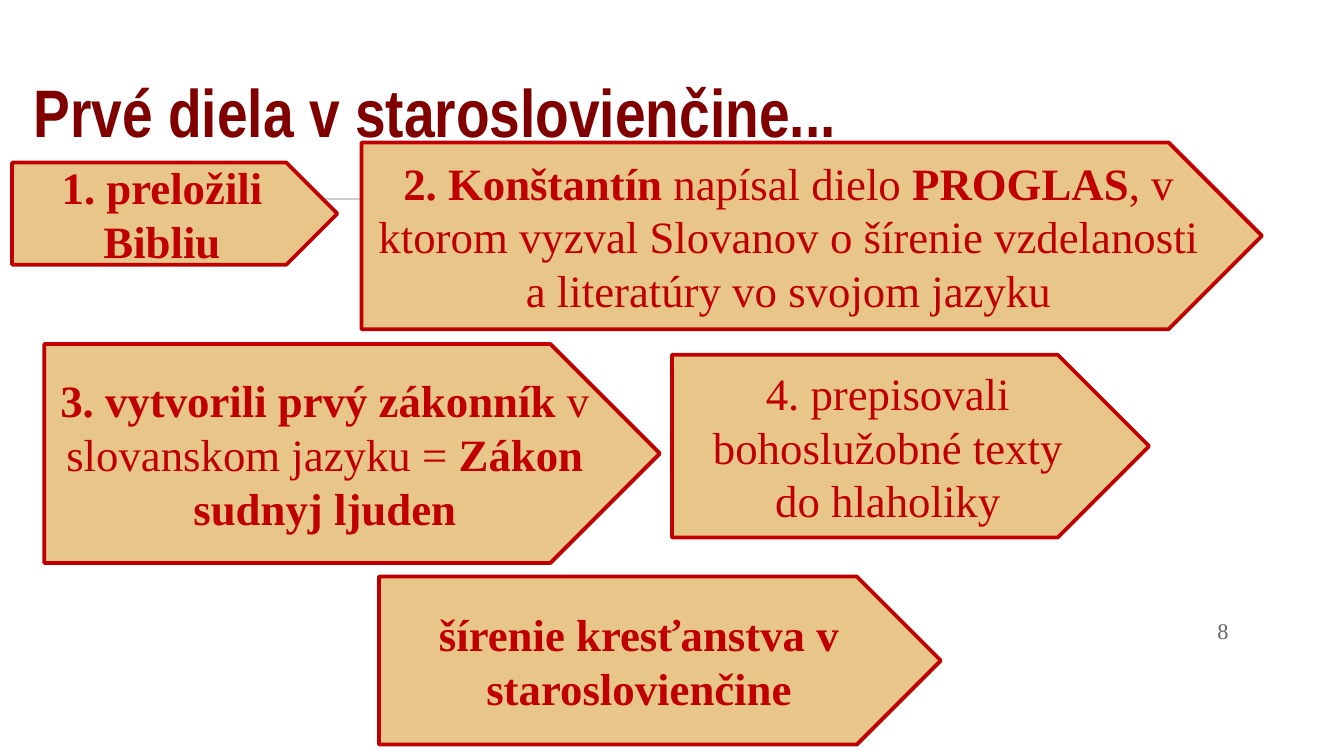
from pptx import Presentation
from pptx.dml.color import RGBColor
from pptx.enum.shapes import MSO_CONNECTOR as Connector, MSO_SHAPE as Shape
from pptx.enum.text import MSO_ANCHOR as Anchor, PP_ALIGN as Align
from pptx.util import Pt
from lxml.etree import SubElement
from pptx.oxml.ns import qn

PX = 4572
SERIF = "Times New Roman"
RED = "C00000"
ARROWS = [
    ((18, 242, 484, 152), [("1. preložili Bibliu", True)]),
    ((538, 212, 1340, 278), [
        ("2. Konštantín ", True),
        ("napísal dielo ", False),
        ("PROGLAS", True),
        (", v ktorom vyzval Slovanov o šírenie vzdelanosti a literatúry vo svojom jazyku", False),
    ]),
    ((66, 512, 916, 326), [
        ("3. vytvorili prvý zákonník ", True),
        ("v slovanskom jazyku = ", False),
        ("Zákon sudnyj ljuden", True),
    ]),
    ((564, 858, 836, 250), [("šírenie kresťanstva v staroslovienčine", True)]),
    ((1000, 528, 710, 272), [("4. prepisovali bohoslužobné texty do hlaholiky", False)]),
]


def color(value):
    return RGBColor.from_string(value)


def emu(*lengths):
    return [length * PX for length in lengths]


def add_span(para, text, font, size, hue, bold=False):
    span = para.add_run()
    span.text = text
    span.font.name = font
    span.font.size = Pt(size)
    span.font.bold = bold
    span.font.color.rgb = color(hue)


def prepare_frame(frame, anchor, inset):
    frame.word_wrap = True
    frame.vertical_anchor = anchor
    frame.margin_left = frame.margin_right = inset * PX
    frame.margin_top = frame.margin_bottom = inset * PX


def add_rule(page, x, y, width):
    rule = page.shapes.add_connector(Connector.STRAIGHT, *emu(x, y, x + width, y))
    rule.line.color.rgb = color("CCCCCC")
    rule.line.width = Pt(0.75)
    SubElement(rule._element.spPr, qn("a:effectLst"))


def place_title(page, box, text):
    title = page.shapes.title
    title.left, title.top, title.width, title.height = emu(*box)
    prepare_frame(title.text_frame, Anchor.BOTTOM, 20)
    para = title.text_frame.paragraphs[0]
    para.alignment = Align.LEFT
    add_span(para, text, "Arial Narrow", 36, "800000", True)


def add_page_number(page, box, number):
    frame = page.shapes.add_textbox(*emu(*box)).text_frame
    prepare_frame(frame, Anchor.MIDDLE, 20)
    para = frame.paragraphs[0]
    para.alignment = Align.RIGHT
    add_span(para, number, SERIF, 12, "666666")


def add_arrow(page, box, spans):
    arrow = page.shapes.add_shape(Shape.PENTAGON, *emu(*box))
    arrow.shadow.inherit = False
    arrow.fill.solid()
    arrow.fill.fore_color.rgb = color("E8C588")
    arrow.line.color.rgb = color(RED)
    arrow.line.width = Pt(2)
    frame = arrow.text_frame
    frame.word_wrap = True
    frame.vertical_anchor = Anchor.MIDDLE
    para = frame.paragraphs[0]
    para.alignment = Align.CENTER
    for text, bold in spans:
        add_span(para, text, SERIF, 24, RED, bold)


def main():
    deck = Presentation()
    deck.slide_width, deck.slide_height = emu(2000, 1125)
    page = deck.slides.add_slide(deck.slide_layouts[5])
    add_rule(page, 364, 296, 1428)
    place_title(page, (30, 90, 1726, 154), "Prvé diela v staroslovienčine...")
    add_page_number(page, (1728, 896, 120, 86), "8")
    for box, spans in ARROWS:
        add_arrow(page, box, spans)
    deck.save("out.pptx")


if __name__ == "__main__":
    main()
